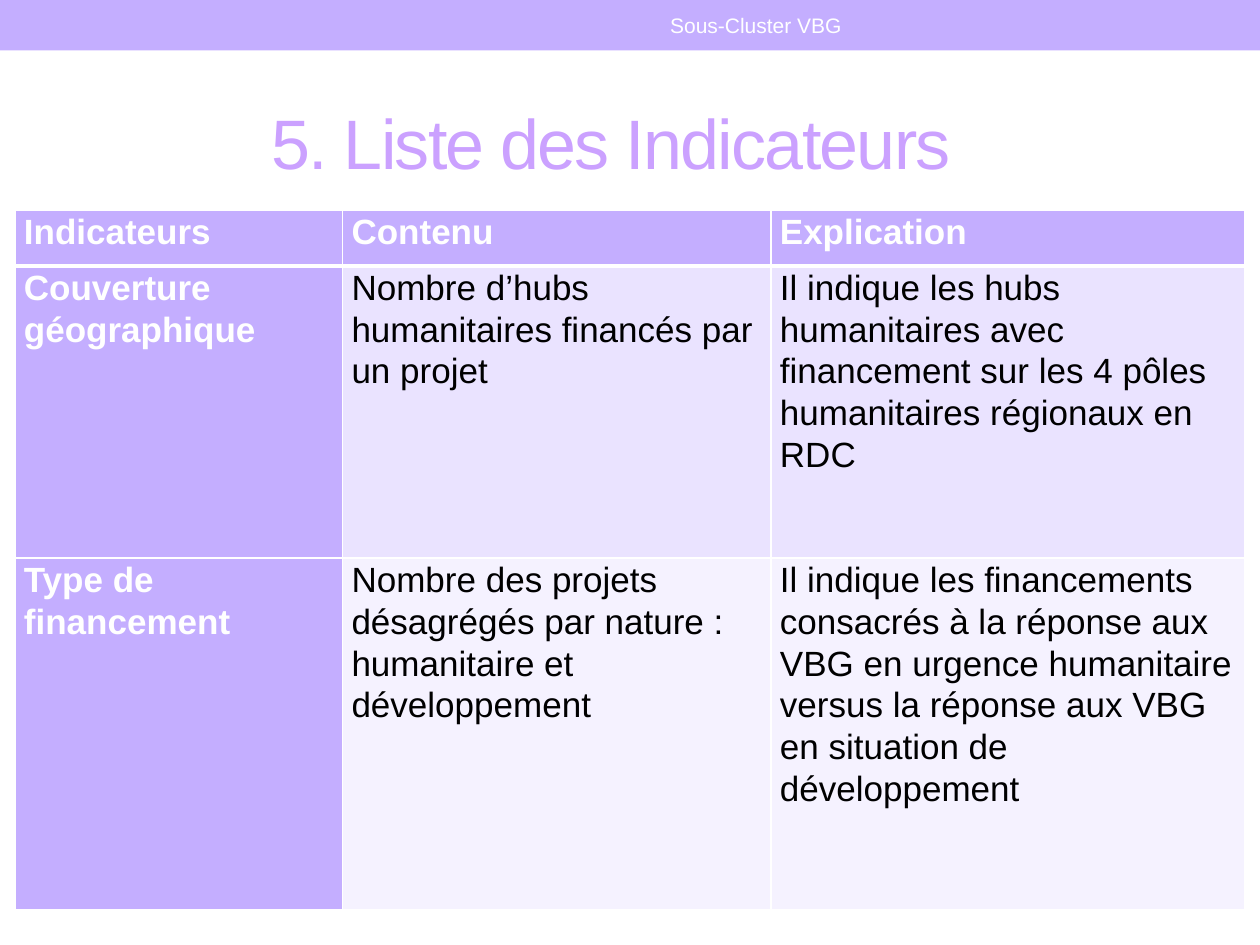
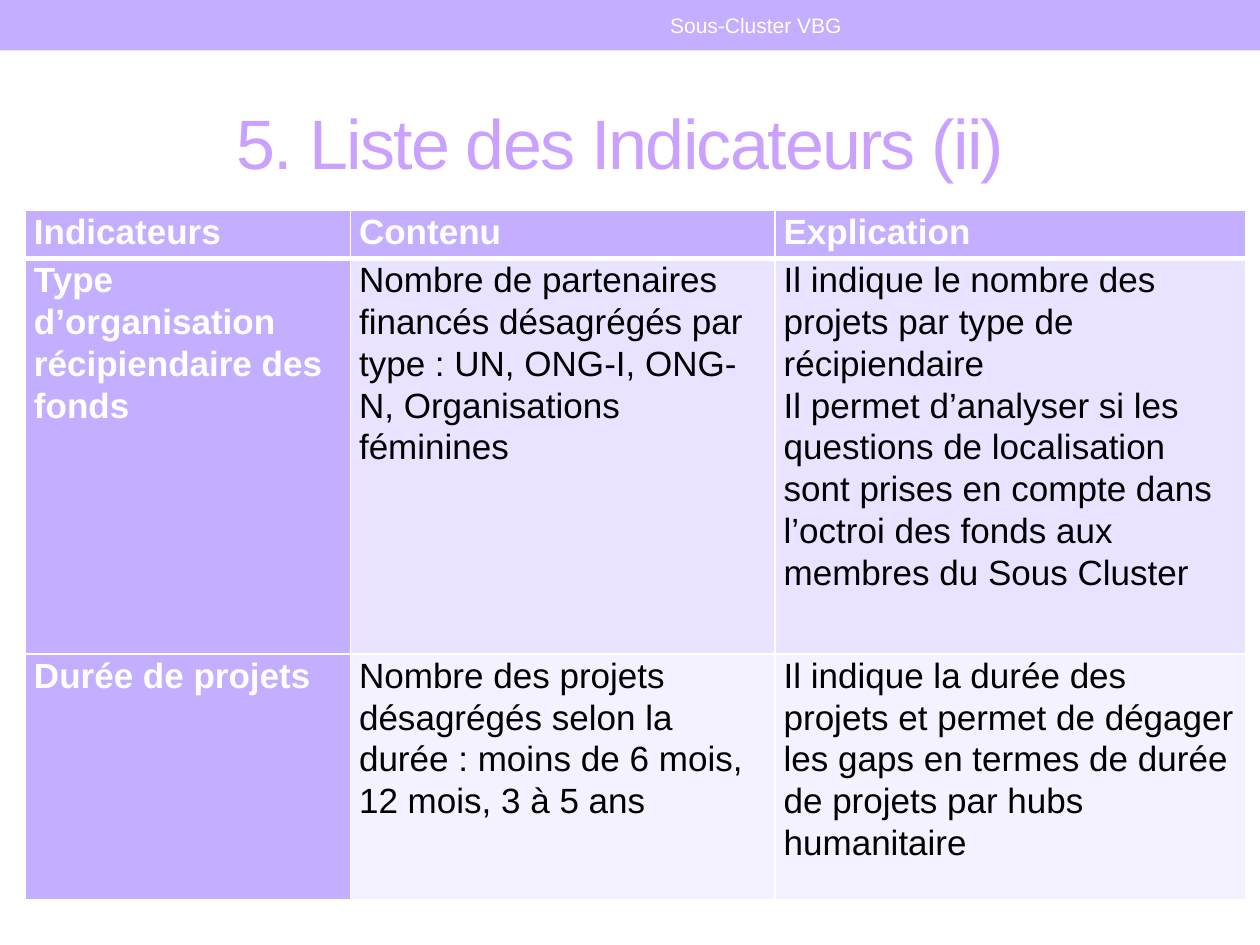
from lxml import etree
from pptx import Presentation
from pptx.dml.color import RGBColor
from pptx.enum.shapes import MSO_SHAPE
from pptx.enum.text import MSO_ANCHOR, PP_ALIGN
from pptx.oxml.ns import qn
from pptx.util import Inches, Pt

RECT = MSO_SHAPE.RECTANGLE
TOP, MIDDLE = MSO_ANCHOR.TOP, MSO_ANCHOR.MIDDLE
LEFT, CENTER = PP_ALIGN.LEFT, PP_ALIGN.CENTER

COLORS = {
    "band": "C4AEFF",
    "title": "CBA1FF",
    "row_dark": "EAE3FF",
    "row_light": "F5F2FF",
    "white": "FFFFFF",
    "black": "000000",
}
FONT = "Arial"
HEADINGS = ["Indicateurs", "Contenu", "Explication"]
BAND_BOX = (0, 0, 10, 0.4)
BAND_TEXT_BOX = (3.75, 0.02, 4.5, 0.36)
TITLE_BOX = (0.5, 0.58, 9, 1.08)
TABLE_TOP = 1.67

SLIDES = [
    {
        "title": "5. Liste des Indicateurs",
        "title_inset": 0.4,
        "left": 0.12,
        "cols": [2.6, 3.4, 3.76],
        "heights": [0.44, 2.32, 2.79],
        "rows": [
            ["Couverture géographique",
             "Nombre d’hubs humanitaires financés par un projet",
             "Il indique les hubs humanitaires avec financement sur les 4 pôles "
             "humanitaires régionaux en RDC"],
            ["Type de financement",
             "Nombre des projets désagrégés par nature : humanitaire et "
             "développement",
             "Il indique les financements consacrés à la réponse aux VBG en "
             "urgence humanitaire versus la réponse aux VBG en situation de "
             "développement"],
        ],
    },
    {
        "title": "5. Liste des Indicateurs (ii)",
        "title_inset": 0.25,
        "left": 0.2,
        "cols": [2.58, 3.37, 3.74],
        "heights": [0.38, 3.14, 1.95],
        "rows": [
            ["Type d’organisation récipiendaire des fonds",
             "Nombre de partenaires financés désagrégés par type : UN, ONG-I, "
             "ONG-N, Organisations féminines",
             "Il indique le nombre des projets par type de récipiendaire\n"
             "Il permet d’analyser si les questions de localisation sont prises "
             "en compte dans l’octroi des fonds aux membres du Sous Cluster"],
            ["Durée de projets",
             "Nombre des projets désagrégés selon la durée : moins de 6 mois, "
             "12 mois, 3 à 5 ans",
             "Il indique la durée des projets et permet de dégager les gaps en "
             "termes de durée de projets par hubs humanitaire"],
        ],
    },
]


def rgb(name):
    return RGBColor.from_string(COLORS[name])


def style_paragraph(p, size, color, bold=False, align=LEFT):
    p.alignment = align
    p.font.name = FONT
    p.font.size = Pt(size)
    p.font.bold = bold
    p.font.color.rgb = rgb(color)


def add_text(slide, box, text, size, color):
    """Add a centred one-line text box and return its text frame."""
    tf = slide.shapes.add_textbox(*map(Inches, box)).text_frame
    tf.word_wrap = True
    tf.vertical_anchor = MIDDLE
    tf.text = text
    style_paragraph(tf.paragraphs[0], size, color, align=CENTER)
    return tf


def add_band(slide):
    sp = slide.shapes.add_shape(RECT, *map(Inches, BAND_BOX))
    sp.shadow.inherit = False
    sp.fill.solid()
    sp.fill.fore_color.rgb = rgb("band")
    sp.line.fill.background()
    add_text(slide, BAND_TEXT_BOX, "Sous-Cluster VBG", 12, "white")


def add_title(slide, text, right_inset):
    tf = add_text(slide, TITLE_BOX, text, 40, "title")
    tf.margin_right = Inches(right_inset)
    for r in tf.paragraphs[0].runs:
        r._r.get_or_add_rPr().set("spc", "-100")


def set_borders(cell, top, bottom):
    """Draw white cell borders; top and bottom are widths in points."""
    tc_pr = cell._tc.get_or_add_tcPr()
    for side, width in (("L", 1), ("R", 1), ("T", top), ("B", bottom)):
        ln = etree.SubElement(tc_pr, qn(f"a:ln{side}"), w=str(Pt(width)))
        fill = etree.SubElement(ln, qn("a:solidFill"))
        etree.SubElement(fill, qn("a:srgbClr"), val=COLORS["white"])


def fill_cell(cell, text, row, col):
    is_heading = row == 0 or col == 0
    set_borders(cell, top=3 if row == 1 else 1, bottom=3 if row == 0 else 1)
    cell.fill.solid()
    body_fill = "row_dark" if row % 2 else "row_light"
    cell.fill.fore_color.rgb = rgb("band" if is_heading else body_fill)
    cell.margin_left = cell.margin_right = Inches(0.07)
    cell.margin_top = cell.margin_bottom = 0
    cell.vertical_anchor = TOP
    cell.text_frame.text = text
    for p in cell.text_frame.paragraphs:
        style_paragraph(p, 20, "white" if is_heading else "black", is_heading)
        p.line_spacing = 1.07


def add_indicator_table(slide, left, cols, heights, rows):
    box = (left, TABLE_TOP, sum(cols), sum(heights))
    frame = slide.shapes.add_table(len(heights), len(cols), *map(Inches, box))
    table = frame.table
    table.first_col = True
    for column, width in zip(table.columns, cols):
        column.width = Inches(width)
    for table_row, height in zip(table.rows, heights):
        table_row.height = Inches(height)
    for i, texts in enumerate([HEADINGS] + rows):
        for j, text in enumerate(texts):
            fill_cell(table.cell(i, j), text, i, j)


def add_indicator_slide(prs, data):
    slide = prs.slides.add_slide(prs.slide_layouts[6])
    add_band(slide)
    add_title(slide, data["title"], data["title_inset"])
    add_indicator_table(slide, data["left"], data["cols"], data["heights"],
                        data["rows"])


def main():
    prs = Presentation()
    prs.slide_width = Inches(10)
    prs.slide_height = Inches(7.5)
    for data in SLIDES:
        add_indicator_slide(prs, data)
    prs.save("out.pptx")


if __name__ == "__main__":
    main()
